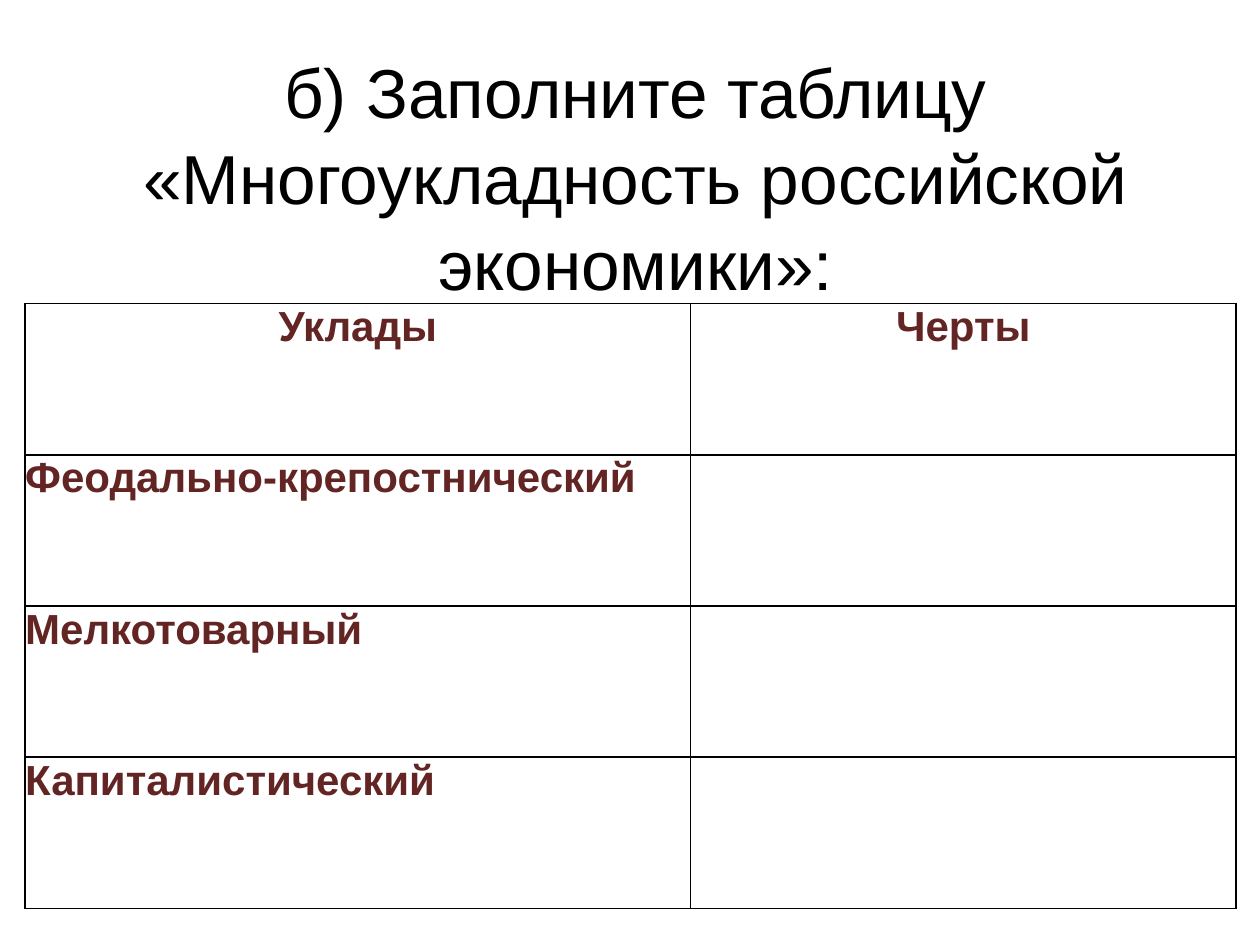
"""Build a slide with a title and a table of economic structures to fill in."""
from lxml.etree import SubElement
from pptx import Presentation
from pptx.dml.color import RGBColor
from pptx.enum.text import MSO_ANCHOR, PP_ALIGN
from pptx.oxml.ns import qn
from pptx.util import Inches, Pt

COLORS = {"title": "000000", "table_text": "632523", "border": "000000", "background": "FFFFFF"}
FONT = "Arial"
ROWS = [
    ("Уклады", "Черты"),
    ("Феодально-крепостнический", ""),
    ("Мелкотоварный", ""),
    ("Капиталистический", ""),
]
COLUMN_WIDTHS = [5.28, 4.33]
ROW_HEIGHT = 1.2


def format_font(font, size, color, bold):
    font.name = FONT
    font.size = Pt(size)
    font.bold = bold
    font.color.rgb = RGBColor.from_string(COLORS[color])


def add_borders(cell):
    properties = cell._tc.get_or_add_tcPr()
    for index, side in enumerate(("a:lnL", "a:lnR", "a:lnT", "a:lnB")):
        line = properties.makeelement(qn(side), {"w": str(Pt(1))})
        fill = SubElement(line, qn("a:solidFill"))
        SubElement(fill, qn("a:srgbClr"), val=COLORS["border"])
        properties.insert(index, line)


presentation = Presentation()
presentation.slide_width = Inches(10)
presentation.slide_height = Inches(7.5)
slide = presentation.slides.add_slide(presentation.slide_layouts[5])
slide.background.fill.solid()
slide.background.fill.fore_color.rgb = RGBColor.from_string(COLORS["background"])

title = slide.shapes.title
title.left, title.top = Inches(0.2), Inches(0.29)
title.width, title.height = Inches(9.69), Inches(2.2)
title.text_frame.text = "б) Заполните таблицу «Многоукладность российской экономики»:"
title.text_frame.word_wrap = True
title.text_frame.vertical_anchor = MSO_ANCHOR.MIDDLE
paragraph = title.text_frame.paragraphs[0]
paragraph.alignment = PP_ALIGN.CENTER
paragraph.line_spacing = 1.04
format_font(paragraph.runs[0].font, 39.6, "title", False)

table = slide.shapes.add_table(
    len(ROWS), len(COLUMN_WIDTHS), Inches(0.2), Inches(2.41),
    Inches(sum(COLUMN_WIDTHS)), Inches(ROW_HEIGHT * len(ROWS)),
).table
table.horz_banding = False
for column, width in zip(table.columns, COLUMN_WIDTHS):
    column.width = Inches(width)

for row_index, texts in enumerate(ROWS):
    table.rows[row_index].height = Inches(ROW_HEIGHT)
    for column_index, text in enumerate(texts):
        cell = table.cell(row_index, column_index)
        cell.margin_left = cell.margin_right = cell.margin_top = cell.margin_bottom = 0
        cell.fill.background()
        add_borders(cell)
        cell.text_frame.text = text
        paragraph = cell.text_frame.paragraphs[0]
        paragraph.alignment = PP_ALIGN.CENTER if row_index == 0 else PP_ALIGN.LEFT
        for run in paragraph.runs:
            format_font(run.font, 24, "table_text", True)

presentation.save("out.pptx")
